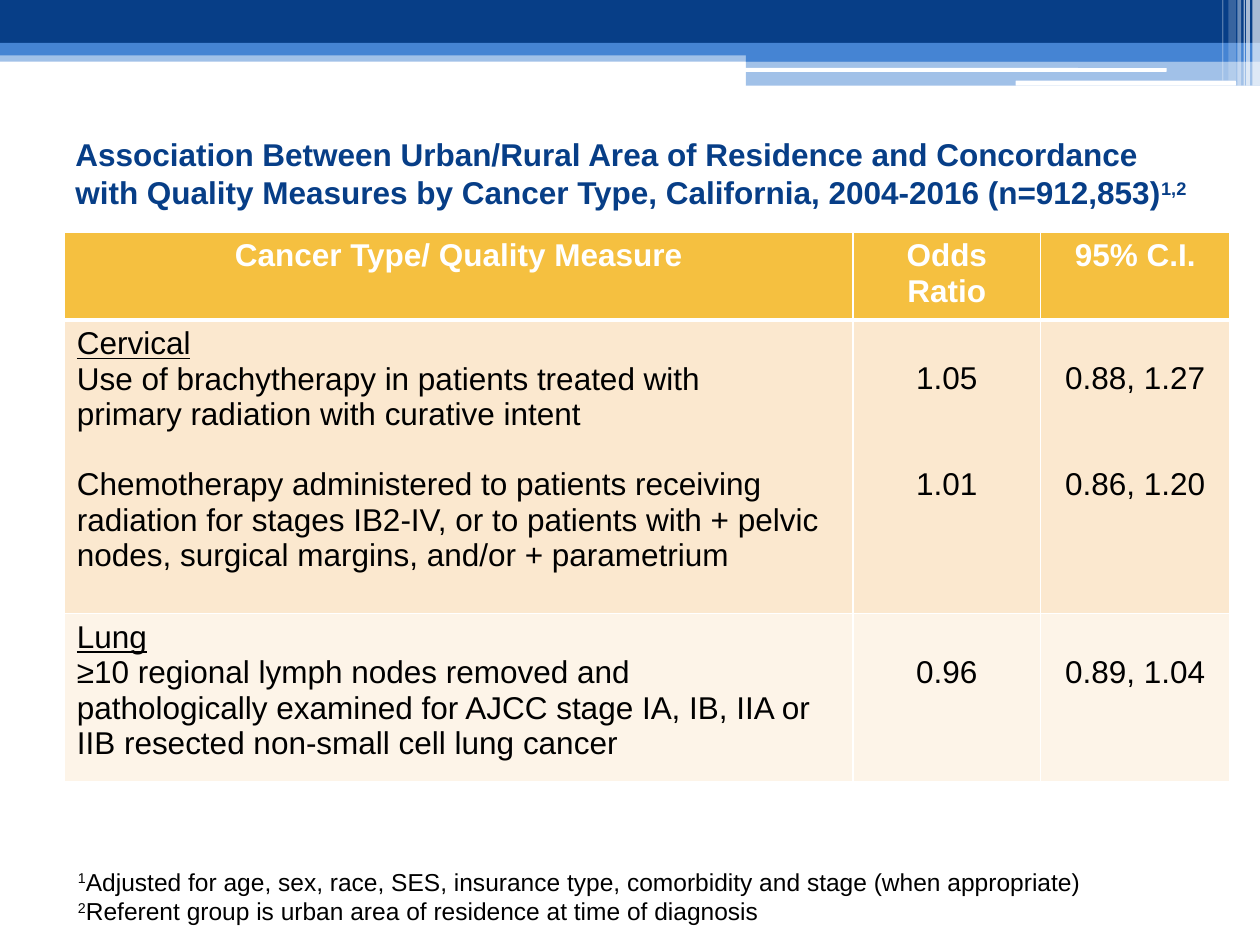
from lxml.etree import SubElement
from pptx import Presentation
from pptx.dml.color import RGBColor
from pptx.enum.shapes import MSO_SHAPE
from pptx.enum.text import MSO_ANCHOR, PP_ALIGN
from pptx.oxml.ns import qn
from pptx.util import Inches, Pt

NAVY, BLUE, WHITE, BLACK = "073E87", "4584D3", "FFFFFF", "000000"
GOLD, PEACH, CREAM = "F5C040", "FBE8CF", "FDF4E8"

# left, top, width, height, colour, opacity in percent
BANDS = [
    (0, 0.4, 10, 0.09, BLUE, 50),
    (0, 0, 10, 0.34, NAVY, 100),
    (0, 0.34, 10, 0.1, BLUE, 100),
    (5.92, 0.39, 4.08, 0.1, BLUE, 100),
    (5.92, 0.48, 4.08, 0.2, BLUE, 50),
]
ROUNDED_BARS = [
    (5.91, 0.54, 3.35, 0.03, WHITE, 100),
    (8.06, 0.64, 1.75, 0.04, WHITE, 100),
]
# left, width, height, opacity in percent
STRIPES = [
    (9.94, 0.06, 0.68, 65),
    (9.89, 0.03, 0.68, 65),
    (9.87, 0.01, 0.68, 60),
    (9.82, 0.03, 0.68, 40),
    (9.75, 0.06, 0.64, 20),
    (9.7, 0.01, 0.64, 30),
]
TITLE = ("Association Between Urban/Rural Area of Residence and Concordance "
         "with Quality Measures by Cancer Type, California, 2004-2016 (n=912,853)")
TITLE_NOTES = "1,2"
HEADERS = ["Cancer Type/ Quality Measure", "Odds Ratio", "95% C.I."]
# cancer type, fill, measures (one list of paragraphs each), odds ratios, intervals
CANCERS = [
    ("Cervical", PEACH,
     [["Use of brachytherapy in patients treated with",
       "primary radiation with curative intent"],
      ["Chemotherapy administered to patients receiving",
       "radiation for stages IB2-IV, or to patients with + pelvic nodes, "
       "surgical margins, and/or + parametrium"]],
     ["1.05", "1.01"], ["0.88, 1.27", "0.86, 1.20"]),
    ("Lung", CREAM,
     [["≥10 regional lymph nodes removed and\vpathologically examined for AJCC "
       "stage IA, IB, IIA or IIB resected non-small cell lung cancer"]],
     ["0.96"], ["0.89, 1.04"]),
]
FOOTNOTES = [
    ("1", "Adjusted for age, sex, race, SES, insurance type, comorbidity and stage "
          "(when appropriate)"),
    ("2", "Referent group is urban area of residence at time of diagnosis"),
]
COLUMN_WIDTHS = [6.26, 1.49, 1.5]
ROW_HEIGHTS = [0.66, 2.33, 1.33]
LINE_POINTS = 20
CELL_MARGIN = 0.05


def color(hex_string):
    return RGBColor.from_string(hex_string)


def add_bar(slide, kind, left, top, width, height, fill, opacity):
    bar = slide.shapes.add_shape(
        kind, Inches(left), Inches(top), Inches(width), Inches(height))
    bar.shadow.inherit = False
    bar.line.fill.background()
    bar.fill.solid()
    bar.fill.fore_color.rgb = color(fill)
    if opacity < 100:
        fill_color = bar.fill._xPr.find(qn("a:solidFill"))[0]
        SubElement(fill_color, qn("a:alpha"), val=str(opacity * 1000))


def style(paragraph, size, font_color, bold=False):
    font = paragraph.font
    font.name, font.size, font.bold = "Arial", Pt(size), bold
    font.color.rgb = color(font_color)


def add_superscript(paragraph, text):
    run = paragraph.add_run()
    run.text = text
    run._r.get_or_add_rPr().set("baseline", "30000")


def add_text_box(slide, left, top, width, height):
    box = slide.shapes.add_textbox(
        Inches(left), Inches(top), Inches(width), Inches(height))
    return box.text_frame


def fill_cell(cell, fill, lines, font_color=BLACK, bold=False, align=PP_ALIGN.CENTER):
    """Write lines, given as (text, blank lines before) pairs, and style the cell."""
    cell.fill.solid()
    cell.fill.fore_color.rgb = color(fill)
    frame = cell.text_frame
    for index, (text, gap) in enumerate(lines):
        paragraph = frame.add_paragraph() if index else frame.paragraphs[0]
        paragraph.text = text
        paragraph.alignment = align
        style(paragraph, 18, font_color, bold)
        if index:
            paragraph.space_before = Pt(gap * LINE_POINTS)
        else:
            cell.margin_top = Inches(CELL_MARGIN) + Pt(gap * LINE_POINTS)


def set_borders(cell, bottom_width):
    properties = cell._tc.get_or_add_tcPr()
    for index, (side, width) in enumerate(
            [("lnL", 1), ("lnR", 1), ("lnT", 1), ("lnB", bottom_width)]):
        line = SubElement(properties, qn(f"a:{side}"), w=str(Pt(width)))
        SubElement(SubElement(line, qn("a:solidFill")), qn("a:srgbClr"), val=WHITE)
        properties.insert(index, line)


def add_measure_table(slide):
    table = slide.shapes.add_table(
        len(ROW_HEIGHTS), len(COLUMN_WIDTHS), Inches(0.51), Inches(1.84),
        Inches(sum(COLUMN_WIDTHS)), Inches(sum(ROW_HEIGHTS))).table
    for column, width in zip(table.columns, COLUMN_WIDTHS):
        column.width = Inches(width)
    for row, height in zip(table.rows, ROW_HEIGHTS):
        row.height = Inches(height)

    for column, header in enumerate(HEADERS):
        fill_cell(table.cell(0, column), GOLD, [(header, 0)], WHITE, bold=True)
    for row, (cancer, fill, measures, *value_columns) in enumerate(CANCERS, start=1):
        lines = [(cancer, 0)]
        for number, measure in enumerate(measures):
            lines += [(text, int(number > 0 and part == 0))
                      for part, text in enumerate(measure)]
        name_cell = table.cell(row, 0)
        fill_cell(name_cell, fill, lines, align=PP_ALIGN.LEFT)
        name_cell.text_frame.paragraphs[0].runs[0].font.underline = True
        for column, values in enumerate(value_columns, start=1):
            fill_cell(table.cell(row, column), fill,
                      [(value, 2 if number else 1) for number, value in enumerate(values)])

    for row in range(len(ROW_HEIGHTS)):
        for column in range(len(COLUMN_WIDTHS)):
            set_borders(table.cell(row, column), 1 if row else 3)


def main():
    presentation = Presentation()
    presentation.slide_width, presentation.slide_height = Inches(10), Inches(7.5)
    slide = presentation.slides.add_slide(presentation.slide_layouts[6])

    for band in BANDS:
        add_bar(slide, MSO_SHAPE.RECTANGLE, *band)
    for bar in ROUNDED_BARS:
        add_bar(slide, MSO_SHAPE.ROUNDED_RECTANGLE, *bar)
    for left, width, height, opacity in STRIPES:
        add_bar(slide, MSO_SHAPE.RECTANGLE, left, 0, width, height, WHITE, opacity)

    title = add_text_box(slide, 0.5, 1, 9.17, 0.75)
    title.word_wrap = True
    title.vertical_anchor = MSO_ANCHOR.MIDDLE
    heading = title.paragraphs[0]
    heading.add_run().text = TITLE
    add_superscript(heading, TITLE_NOTES)
    style(heading, 18, NAVY, bold=True)

    add_measure_table(slide)

    notes = add_text_box(slide, 0.52, 6.83, 8.21, 0.57)
    notes.word_wrap = False
    for index, (mark, text) in enumerate(FOOTNOTES):
        paragraph = notes.add_paragraph() if index else notes.paragraphs[0]
        add_superscript(paragraph, mark)
        paragraph.add_run().text = text
        style(paragraph, 14, BLACK)

    presentation.save("out.pptx")


if __name__ == "__main__":
    main()
